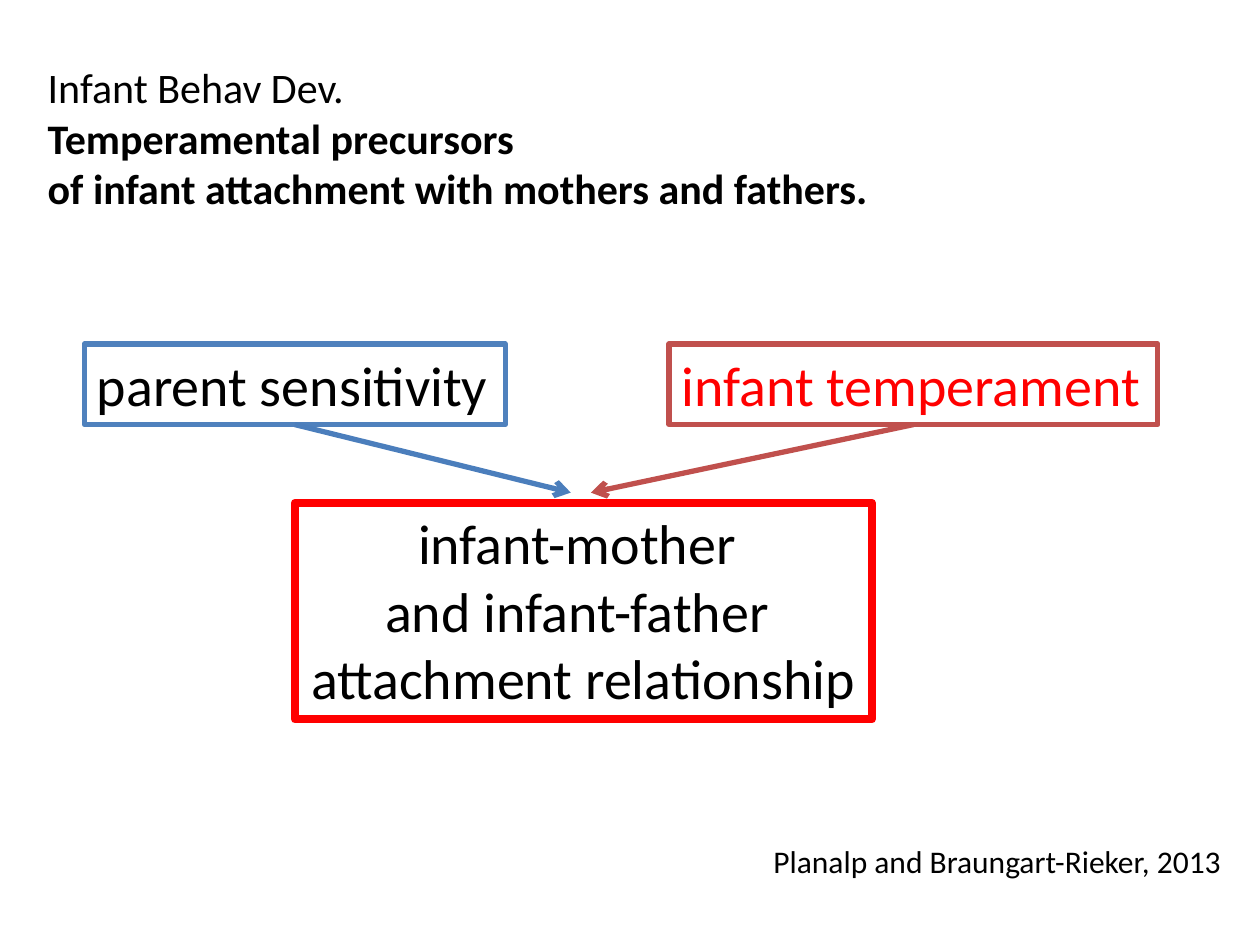
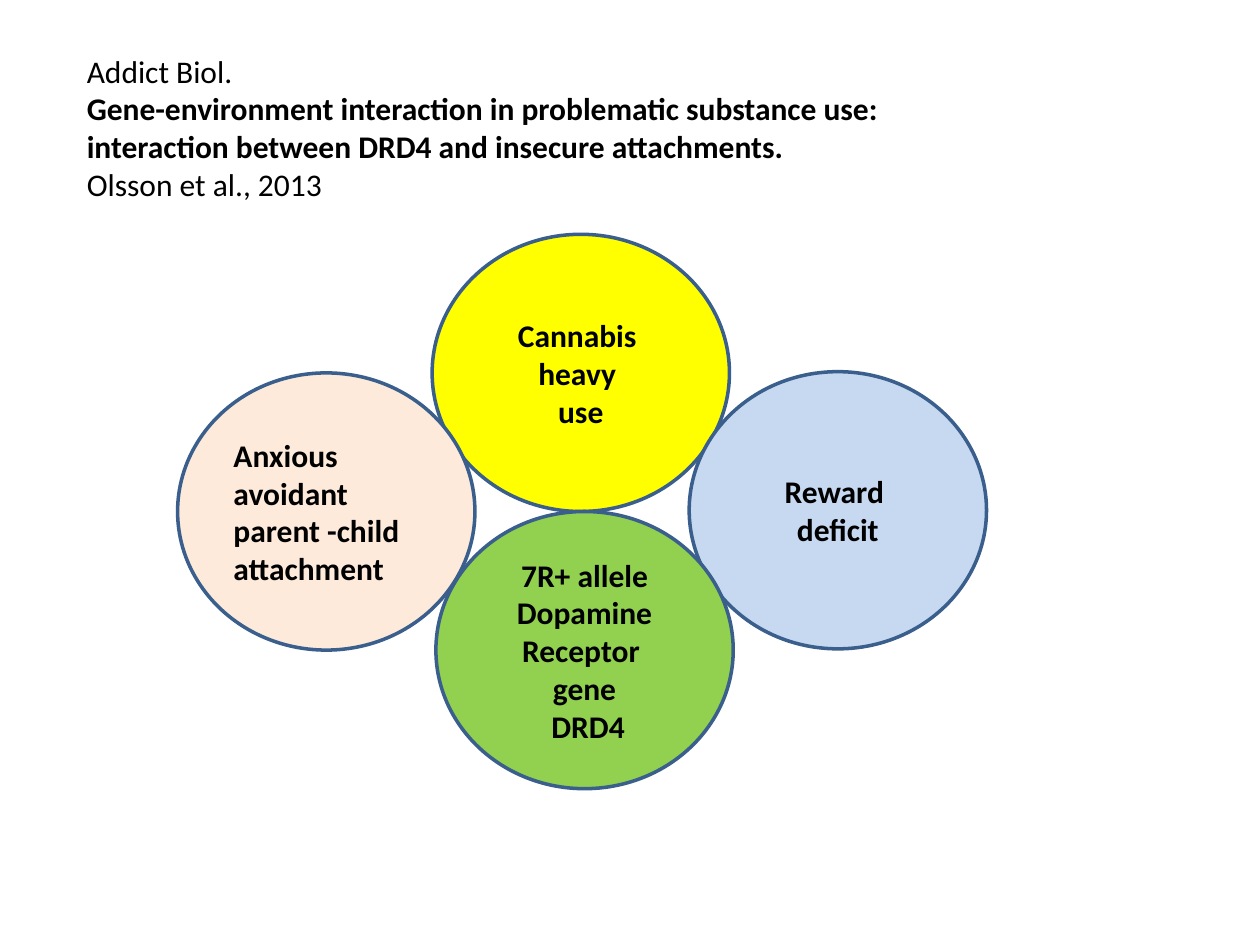
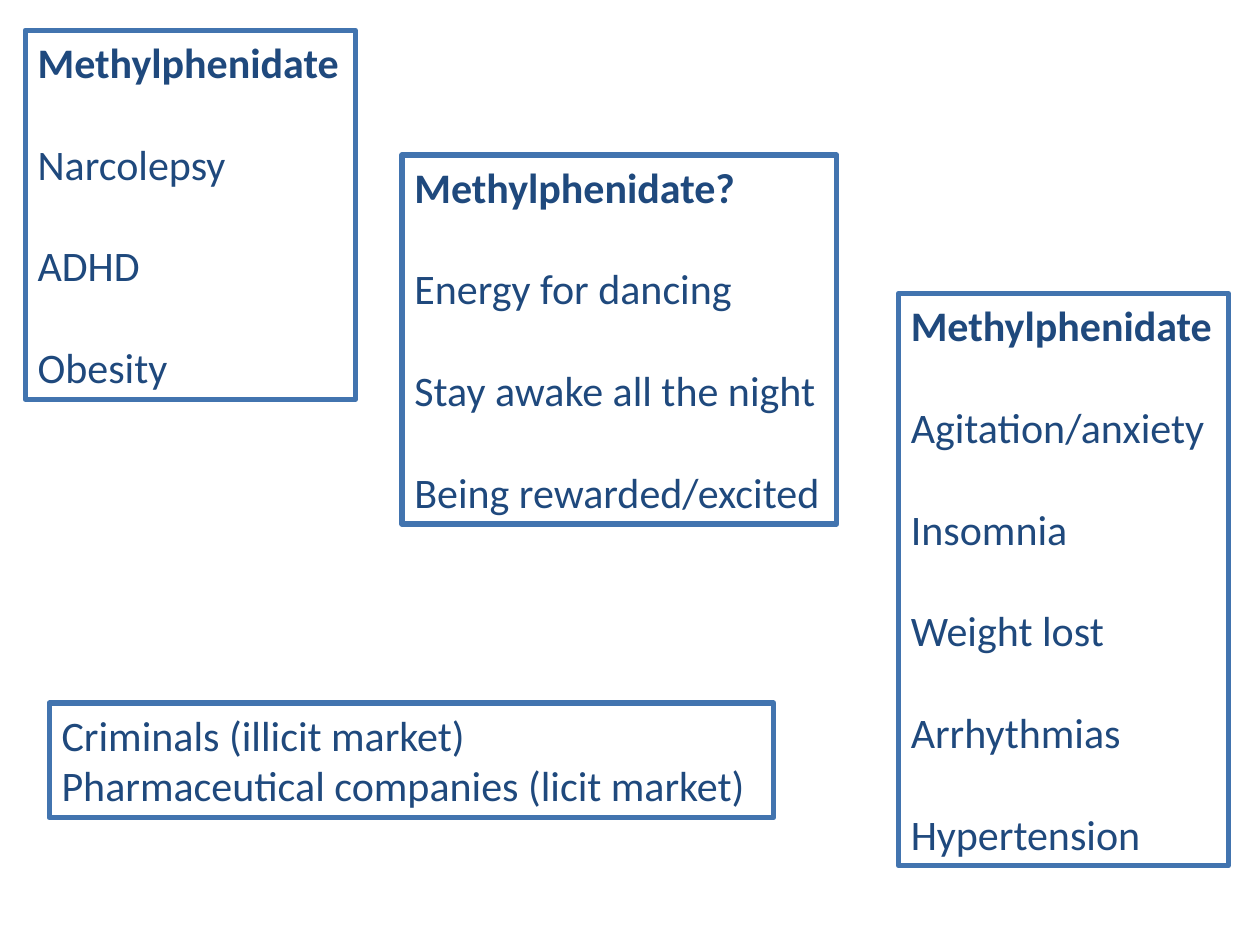
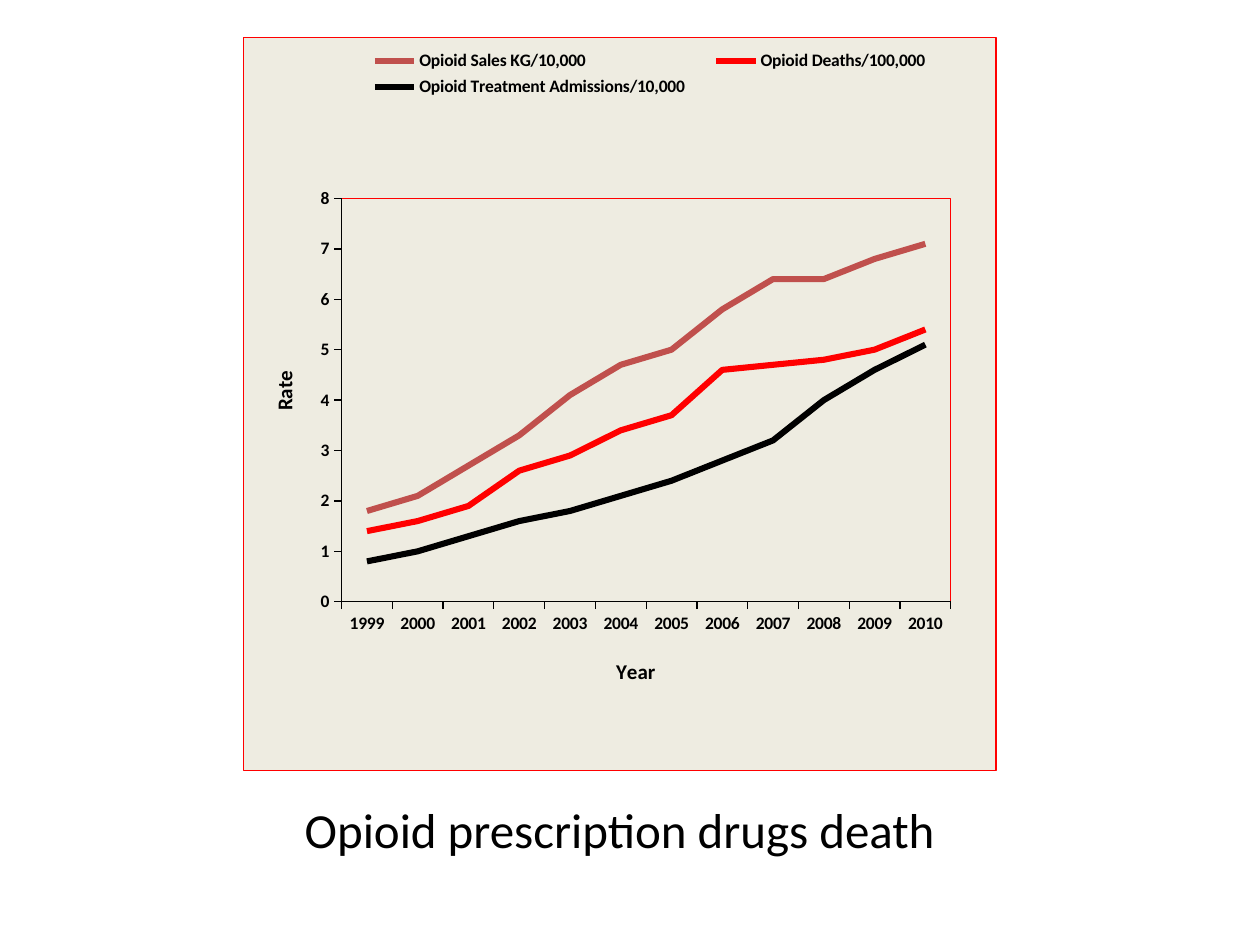
"""Build four slides on attachment, methylphenidate and opioids."""
from dataclasses import dataclass
from typing import Any

from lxml.etree import SubElement
from pptx import Presentation
from pptx.chart.data import CategoryChartData
from pptx.dml.color import RGBColor
from pptx.enum.chart import XL_CHART_TYPE, XL_LEGEND_POSITION, XL_TICK_MARK
from pptx.enum.shapes import MSO_CONNECTOR, MSO_SHAPE
from pptx.enum.text import MSO_ANCHOR, MSO_AUTO_SIZE, PP_ALIGN
from pptx.oxml import parse_xml
from pptx.oxml.ns import nsdecls, qn
from pptx.util import Inches, Pt


@dataclass(frozen=True)
class Theme:
    """Hold the colours, font and type sizes."""
    font: str = "Calibri"
    black: str = "000000"
    red: str = "FF0000"
    blue: str = "4F81BD"
    arrow: str = "4B7EBC"
    brick: str = "C0504D"
    navy: str = "1F497D"
    frame: str = "4274AF"
    rim: str = "3A5F8C"
    yellow: str = "FFFF00"
    sky: str = "C6D9F1"
    peach: str = "FDEADA"
    green: str = "92D050"
    sand: str = "EEECE1"
    tick: float = 10
    axis: float = 12
    body: float = 18
    head: float = 24
    title: float = 28
    large: float = 32
    gap: float = 29.3


THEME = Theme()
Spot = tuple[float, float, float, float]


@dataclass(frozen=True)
class Label:
    """Describe lines of text, with the indexes of the bold ones."""
    lines: tuple[str, ...]
    size: float = THEME.body
    color: str = THEME.black
    bold: tuple[int, ...] = ()
    center: bool = False
    gap: float = 0


@dataclass(frozen=True)
class Box:
    """Describe a text box, framed if it has a line colour."""
    spot: Spot
    label: Label
    line: str = ""
    width: float = 3


@dataclass(frozen=True)
class Disc:
    """Describe a filled ellipse by its corner."""
    left: float
    top: float
    fill: str
    lines: tuple[str, ...]
    center: bool = True


@dataclass(frozen=True)
class Trend:
    """Describe one line of the chart."""
    name: str
    color: str
    rates: tuple[float, ...]


PAIR = (
    Box((0.67, 2.73, 3.34, 0.64), Label(("parent sensitivity",), THEME.large), THEME.blue),
    Box((5.31, 2.73, 3.88, 0.64), Label(("infant temperament",), THEME.large, THEME.red), THEME.brick),
)
BOND = (
    Box((0.28, 0.44, 6.79, 1.31), Label((
        "Infant Behav Dev.", "Temperamental precursors",
        "of infant attachment with mothers and fathers."), THEME.head, bold=(1, 2))),
    *PAIR,
    Box((2.34, 3.99, 4.58, 1.72), Label((
        "infant-mother ", "and infant-father ", "attachment relationship"),
        THEME.large, center=True), THEME.red, 4.5),
    Box((6.04, 6.63, 3.8, 0.4), Label(("Planalp and Braungart-Rieker, 2013",))),
)
DISCS = (
    Disc(3.43, 1.86, THEME.yellow, ("Cannabis ", "heavy ", "use")),
    Disc(5.47, 2.95, THEME.sky, ("Reward ", "deficit")),
    Disc(1.41, 2.96, THEME.peach, ("Anxious", "avoidant", "parent -child", "attachment"), False),
    Disc(3.46, 4.06, THEME.green, ("7R+ allele", "Dopamine", "Receptor ", "gene", " DRD4")),
)
GENE = Box((0.59, 0.36, 6.59, 1.62), Label((
    "Addict Biol.", "Gene-environment interaction in problematic substance use:",
    "interaction between DRD4 and insecure attachments.", "Olsson et al., 2013"), bold=(1, 2)))


def listing(spot: Spot, *lines: str) -> Box:
    """Return a framed list with a bold first line and wide gaps."""
    return Box(spot, Label(lines, THEME.head, THEME.navy, (0,), gap=THEME.gap), THEME.frame)


DRUG = (
    listing((0.2, 0.24, 2.62, 2.93), "Methylphenidate", "Narcolepsy", "ADHD", "Obesity"),
    listing((3.19, 1.23, 3.45, 2.93), "Methylphenidate?", "Energy for dancing",
            "Stay awake all the night", "Being rewarded/excited"),
    listing((7.13, 2.33, 2.62, 4.54), "Methylphenidate", "Agitation/anxiety", "Insomnia",
            "Weight lost", "Arrhythmias", "Hypertension"),
    Box((0.39, 5.58, 5.75, 0.91), Label((
        "Criminals (illicit market)", "Pharmaceutical companies (licit market)"),
        THEME.head, THEME.navy), THEME.frame),
)
TRENDS = (
    Trend("Opioid Sales KG/10,000 ", THEME.brick,
          (1.8, 2.1, 2.7, 3.3, 4.1, 4.7, 5, 5.8, 6.4, 6.4, 6.8, 7.1)),
    Trend("Opioid Deaths/100,000", THEME.red,
          (1.4, 1.6, 1.9, 2.6, 2.9, 3.4, 3.7, 4.6, 4.7, 4.8, 5, 5.4)),
    Trend("Opioid Treatment Admissions/10,000", THEME.black,
          (0.8, 1, 1.3, 1.6, 1.8, 2.1, 2.4, 2.8, 3.2, 4, 4.6, 5.1)),
)
DEATH = Box((2.32, 6.3, 5.26, 0.57), Label(("Opioid prescription drugs death",), THEME.title))


def stroke(line: Any, color: str, width: float) -> None:
    """Set the colour and width of a line."""
    line.color.rgb = RGBColor.from_string(color)
    line.width = Pt(width)


def style(font: Any, size: float, color: str, bold: bool) -> None:
    """Set the face, size, colour and weight of a font."""
    font.name, font.size, font.bold = THEME.font, Pt(size), bold
    font.color.rgb = RGBColor.from_string(color)


def write(frame: Any, label: Label) -> None:
    """Write a label into a text frame, one run per line."""
    for index, line in enumerate(label.lines):
        para = frame.add_paragraph() if index else frame.paragraphs[0]
        para.alignment = PP_ALIGN.CENTER if label.center else PP_ALIGN.LEFT
        if index and label.gap:
            para.space_before = Pt(label.gap)
        run = para.add_run()
        run.text = line
        style(run.font, label.size, label.color, index in label.bold)


def draw_box(slide: Any, box: Box) -> None:
    """Draw a text box with its frame."""
    shape = slide.shapes.add_textbox(*map(Inches, box.spot))
    if box.line:
        stroke(shape.line, box.line, box.width)
    frame = shape.text_frame
    frame.word_wrap = False
    frame.auto_size = MSO_AUTO_SIZE.SHAPE_TO_FIT_TEXT
    write(frame, box.label)


def draw_disc(slide: Any, disc: Disc) -> None:
    """Draw a filled ellipse with bold text."""
    spot = (disc.left, disc.top, 2.36, 2.2)
    shape = slide.shapes.add_shape(MSO_SHAPE.OVAL, *map(Inches, spot))
    shape.shadow.inherit = False
    shape.fill.solid()
    shape.fill.fore_color.rgb = RGBColor.from_string(disc.fill)
    stroke(shape.line, THEME.rim, 2)
    shape.text_frame.vertical_anchor = MSO_ANCHOR.MIDDLE
    bold = tuple(range(len(disc.lines)))
    write(shape.text_frame, Label(disc.lines, bold=bold, center=disc.center))


def draw_arrow(slide: Any, box: Box, tip: float, color: str) -> None:
    """Draw an arrow from the foot of a box to a tip."""
    left, top, width, height = box.spot
    ends = (left + width / 2, top + height, tip, 3.91)
    arrow = slide.shapes.add_connector(MSO_CONNECTOR.STRAIGHT, *map(Inches, ends))
    stroke(arrow.line, color, 3)
    props = arrow._element.spPr
    SubElement(props.find(qn("a:ln")), qn("a:tailEnd"), type="arrow")
    SubElement(props, qn("a:effectLst"))


def place(part: Any, inner: bool = False, **spot: float) -> None:
    """Place a chart part by shares of the chart size."""
    target = '<c:layoutTarget val="inner"/>' if inner else ""
    modes = "".join(f'<c:{key}Mode val="edge"/>' for key in "xy")
    sides = "".join(f'<c:{key} val="{share}"/>' for key, share in spot.items())
    layout = parse_xml(f'<c:layout {nsdecls("c")}><c:manualLayout>{target}{modes}{sides}'
                       "</c:manualLayout></c:layout>")
    for old in part.findall(qn("c:layout")):
        part.remove(old)
    after = part.find(qn("c:overlay"))
    if after is None:
        part.insert(0, layout)
    else:
        after.addprevious(layout)


def paint(fill: str) -> Any:
    """Return chart area properties with a thin red border."""
    inside = f'<a:solidFill><a:srgbClr val="{fill}"/></a:solidFill>' if fill else "<a:noFill/>"
    return parse_xml(f'<c:spPr {nsdecls("c", "a")}>{inside}<a:ln w="{Pt(0.75)}"><a:solidFill>'
                     f'<a:srgbClr val="{THEME.red}"/></a:solidFill></a:ln></c:spPr>')


def set_axis(axis: Any, name: str, x: float, y: float) -> None:
    """Style an axis and place its title."""
    axis.has_major_gridlines = False
    axis.major_tick_mark = XL_TICK_MARK.OUTSIDE
    axis.minor_tick_mark = XL_TICK_MARK.NONE
    stroke(axis.format.line, THEME.black, 0.75)
    style(axis.tick_labels.font, THEME.tick, THEME.black, True)
    axis.has_title = True
    run = axis.axis_title.text_frame.paragraphs[0].add_run()
    run.text = name
    style(run.font, THEME.axis, THEME.black, True)
    place(axis.axis_title._element, x=x, y=y)


def draw_chart(slide: Any) -> None:
    """Draw the line chart of opioid rates by year."""
    data = CategoryChartData()
    data.categories = [str(year) for year in range(1999, 2011)]
    for trend in TRENDS:
        data.add_series(trend.name, trend.rates)
    spot = map(Inches, (1.93, 0.29, 5.98, 5.83))
    chart = slide.shapes.add_chart(XL_CHART_TYPE.LINE, *spot, data).chart
    style(chart.font, THEME.tick, THEME.black, True)
    chart.has_title = False
    chart.plots[0].vary_by_categories = False
    for line, trend in zip(chart.plots[0].series, TRENDS):
        line.smooth = False
        stroke(line.format.line, trend.color, 3.5)
    set_axis(chart.category_axis, "Year", 0.49, 0.84)
    rate = chart.value_axis
    set_axis(rate, "Rate", 0.03, 0.45)
    rate.minimum_scale, rate.maximum_scale, rate.major_unit = 0, 8, 1
    rate.tick_labels.number_format = "General"
    rate.tick_labels.number_format_is_linked = False
    chart.has_legend = True
    legend = chart.legend
    legend.position = XL_LEGEND_POSITION.TOP
    legend.include_in_layout = False
    style(legend.font, THEME.tick, THEME.black, True)
    place(legend._element, x=0.14, y=0.01, w=0.8, h=0.08)
    root = chart._chartSpace.chart
    place(root.plotArea, True, x=0.13, y=0.22, w=0.81, h=0.55)
    root.plotArea.append(paint(""))
    root.addnext(paint(THEME.sand))


def main() -> None:
    """Build and save the slides."""
    deck = Presentation()
    deck.slide_width, deck.slide_height = Inches(10), Inches(7.5)
    bond, gene, drug, death = (deck.slides.add_slide(deck.slide_layouts[6]) for _ in range(4))
    for box in BOND:
        draw_box(bond, box)
    for box, tip, color in zip(PAIR, (4.53, 4.69), (THEME.arrow, THEME.brick)):
        draw_arrow(bond, box, tip, color)
    for disc in DISCS:
        draw_disc(gene, disc)
    draw_box(gene, GENE)
    for box in DRUG:
        draw_box(drug, box)
    draw_chart(death)
    draw_box(death, DEATH)
    deck.save("out.pptx")


if __name__ == "__main__":
    main()
